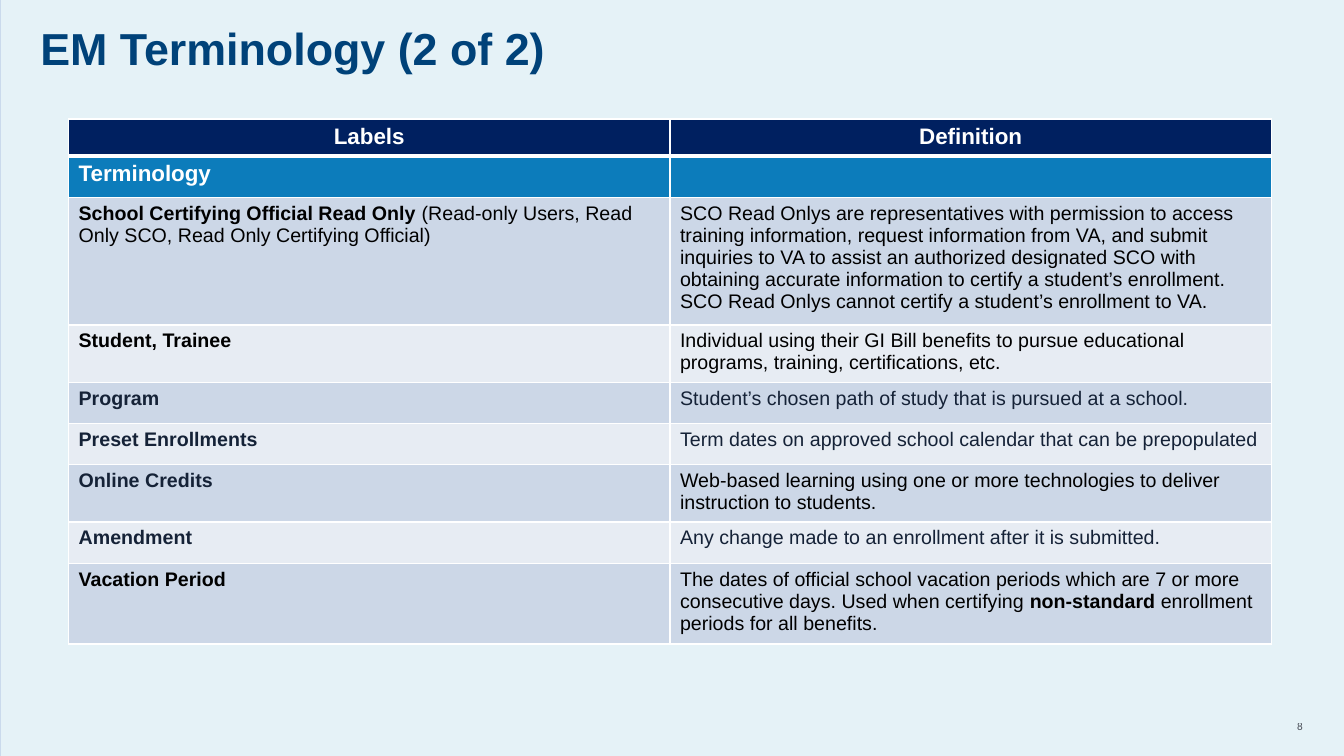
"""Build the EM Terminology slide with its table of labels and definitions."""
from lxml import etree
from pptx import Presentation
from pptx.dml.color import RGBColor
from pptx.enum.shapes import MSO_SHAPE
from pptx.enum.text import MSO_ANCHOR, PP_ALIGN
from pptx.oxml.ns import qn
from pptx.util import Inches, Pt

RECT = MSO_SHAPE.RECTANGLE
TOP, MIDDLE = MSO_ANCHOR.TOP, MSO_ANCHOR.MIDDLE
LEFT, CENTER, RIGHT = PP_ALIGN.LEFT, PP_ALIGN.CENTER, PP_ALIGN.RIGHT
WHITE, BLACK, SLATE = "FFFFFF", "000000", "152237"
NAVY, BLUE, DARK, LIGHT = "002060", "0C7CBB", "CCD7E7", "E7ECF3"


def tint(color):
    return RGBColor.from_string(color)


def write(frame, text, size, color, align=LEFT, face="Arial"):
    """Write text into a frame, with bold parts between asterisks."""
    para = frame.paragraphs[0]
    para.alignment = align
    for i, part in enumerate(text.split("*")):
        if part:
            run = para.add_run()
            run.text = part
            run.font.name, run.font.size = face, Pt(size)
            run.font.bold = i % 2 == 1
            run.font.color.rgb = tint(color)
    return para


deck = Presentation()
deck.slide_width, deck.slide_height = Inches(13.33), Inches(7.5)
slide = deck.slides.add_slide(deck.slide_layouts[5])
shapes = slide.shapes
slide.background.fill.solid()
slide.background.fill.fore_color.rgb = tint("C7D7EB")

edge = Inches(0.01)
panel = shapes.add_shape(RECT, edge, 0, deck.slide_width - edge, deck.slide_height)
panel.shadow.inherit = False
panel.fill.solid()
panel.fill.fore_color.rgb = tint("E5F2F7")
panel.line.fill.background()
shapes._spTree.insert(2, panel._element)

title = shapes.title
title.left, title.top = Inches(0.4), Inches(0.31)
title.width, title.height = Inches(12.5), Inches(0.63)
page = shapes.add_textbox(Inches(12.5), Inches(7.09), Inches(0.42), Inches(0.23))
for box, anchor in ((title, TOP), (page, MIDDLE)):
    frame = box.text_frame
    frame.word_wrap = True
    frame.vertical_anchor = anchor
    frame.margin_left = frame.margin_right = 0
    frame.margin_top = frame.margin_bottom = 0
write(title.text_frame, "*EM Terminology (2 of 2)*", 32, "004279").line_spacing = 0.8
number = write(page.text_frame, "8", 8, "1A1D28", RIGHT, "Calibri")
shade = number.runs[0]._r.find(".//" + qn("a:srgbClr"))
etree.SubElement(shade, qn("a:alpha"), val="75000")

terms = [
    ("*Labels*", "*Definition*", WHITE),
    ("*Terminology*", "", WHITE),
    ("*School Certifying Official Read Only *(Read-only Users, Read Only SCO, "
     "Read Only Certifying Official)",
     "SCO Read Onlys are representatives with permission to access training "
     "information, request information from VA, and submit inquiries to VA to "
     "assist an authorized designated SCO with obtaining accurate information to "
     "certify a student’s enrollment. SCO Read Onlys cannot certify a student’s "
     "enrollment to VA.", BLACK),
    ("*Student, Trainee*",
     "Individual using their GI Bill benefits to pursue educational programs, "
     "training, certifications, etc.", BLACK),
    ("*Program*", "Student’s chosen path of study that is pursued at a school.", SLATE),
    ("*Preset Enrollments*",
     "Term dates on approved school calendar that can be prepopulated", SLATE),
    ("*Online Credits*",
     "Web-based learning using one or more technologies to deliver instruction "
     "to students.", BLACK),
    ("*Amendment*", "Any change made to an enrollment after it is submitted.", SLATE),
    ("*Vacation Period*",
     "The dates of official school vacation periods which are 7 or more "
     "consecutive days. Used when certifying *non-standard *enrollment periods "
     "for all benefits.", BLACK),
]
high = Inches(0.41)
grid = shapes.add_table(len(terms), 2, Inches(0.68), Inches(1.18),
                        Inches(11.93), high * len(terms)).table
for r, (label, meaning, ink) in enumerate(terms):
    grid.rows[r].height = Inches(0.36) if r == 0 else high
    back = (NAVY, BLUE)[r] if r < 2 else (DARK, LIGHT)[r % 2]
    for c, text in enumerate((label, meaning)):
        cell = grid.cell(r, c)
        color = SLATE if label == "*Online Credits*" and c == 0 else ink
        write(cell.text_frame, text, 16 if r < 2 else 14, color,
              CENTER if r == 0 else LEFT)
        props = cell._tc.get_or_add_tcPr()
        for side in "LRTB":
            thick = (r, side) in ((0, "B"), (1, "T"))
            line = etree.SubElement(props, qn("a:ln" + side),
                                    w=str(Pt(3 if thick else 1)))
            fill = etree.SubElement(line, qn("a:solidFill"))
            etree.SubElement(fill, qn("a:srgbClr"), val=WHITE)
        cell.fill.solid()
        cell.fill.fore_color.rgb = tint(back)

deck.save("out.pptx")
